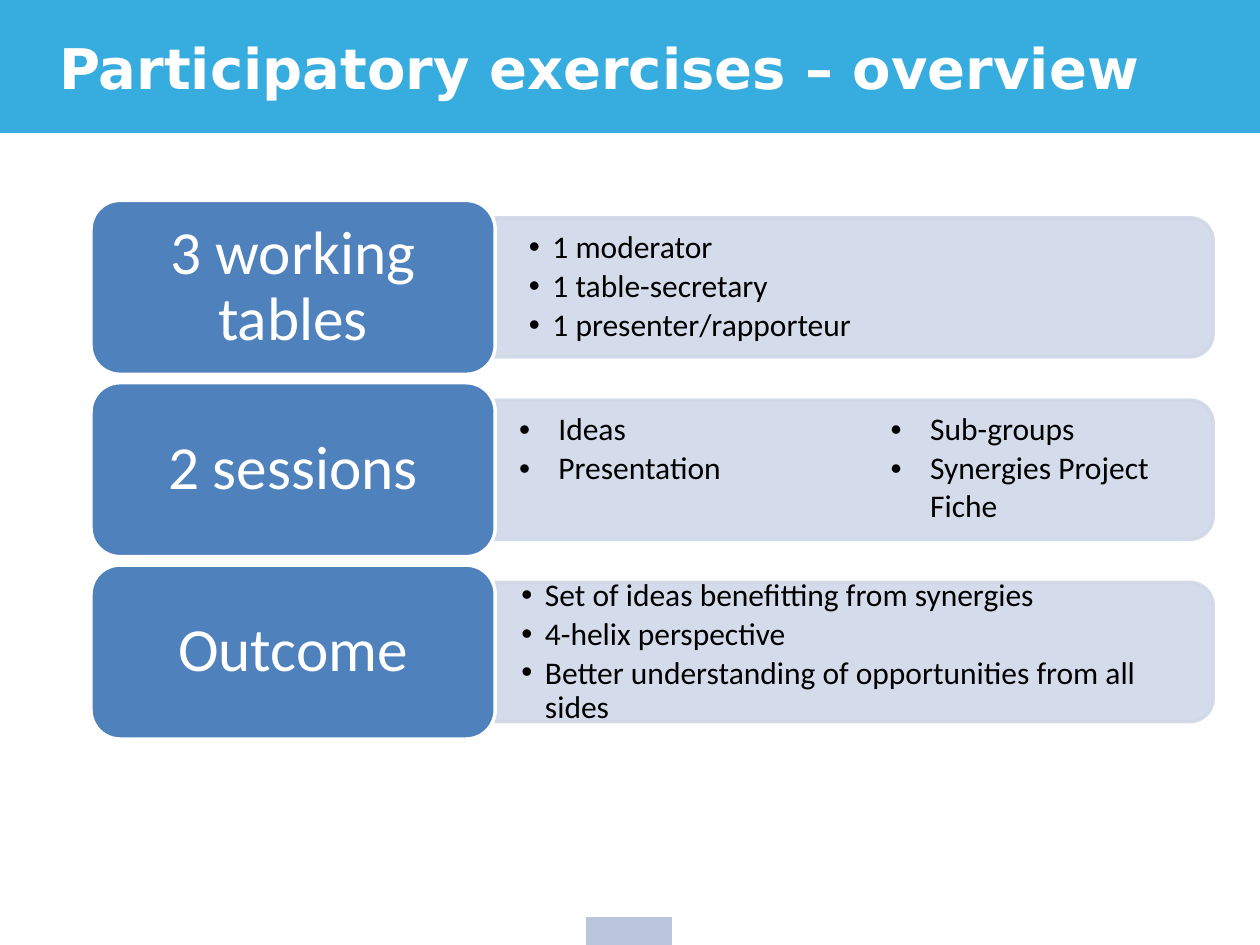
"""Build the overview slide of the participatory exercises."""
from lxml.etree import SubElement
from pptx import Presentation
from pptx.dml.color import RGBColor
from pptx.enum.shapes import MSO_SHAPE
from pptx.enum.text import MSO_ANCHOR, MSO_AUTO_SIZE, PP_ALIGN
from pptx.oxml.ns import qn
from pptx.util import Pt

SKY = RGBColor(0x37, 0xAC, 0xDE)
NAVY = RGBColor(0x17, 0x43, 0x89)
BLUE = RGBColor(0x4F, 0x81, 0xBD)
PALE = RGBColor(0xD0, 0xD8, 0xE8)
WHITE = RGBColor(0xFF, 0xFF, 0xFF)
BLACK = RGBColor(0x00, 0x00, 0x00)

PLAIN_TABLE_STYLE = "{2D5ABB26-0587-4C30-8999-92F81FD0307C}"
FIRST_CENTER, ROW_PITCH = 164.2, 104.2
LABEL_LEFT, LABEL_WIDTH, LABEL_HEIGHT = 52, 231, 99.4
BAND_LEFT, BAND_WIDTH, BAND_HEIGHT = 282.8, 410.4, 79.5
LIST_WIDTH, LIST_HEIGHT = 406.8, 72


def write_text(text_frame, text, size=18, color=BLACK, font="Calibri", bold=False,
               align=PP_ALIGN.LEFT, spacing=1.0, after=0, indent=0):
    """Write one paragraph per line of text, with bullets when indented."""
    for index, line in enumerate(text.split("\n")):
        paragraph = text_frame.paragraphs[0] if index == 0 else text_frame.add_paragraph()
        paragraph.alignment = align
        paragraph.line_spacing = spacing
        paragraph.space_before = Pt(0)
        paragraph.space_after = Pt(after)
        if indent:
            properties = paragraph._p.get_or_add_pPr()
            properties.set("marL", str(Pt(indent)))
            properties.set("indent", str(-Pt(indent)))
            SubElement(properties, qn("a:buFont")).set("typeface", "Arial")
            SubElement(properties, qn("a:buChar")).set("char", "•")
        run = paragraph.add_run()
        run.text = line
        run.font.name = font
        run.font.size = Pt(size)
        run.font.bold = bold
        run.font.color.rgb = color


class SlideBuilder:
    """Hold the style and the current slide."""

    def __init__(self, slide, title_font="DejaVu Sans"):
        self.slide = slide
        self.title_font = title_font

    def place(self, shape, left, top, width, height):
        shape.left, shape.top = Pt(left), Pt(top)
        shape.width, shape.height = Pt(width), Pt(height)
        self.slide.shapes._spTree.append(shape._element)

    def frame(self, shape, horizontal, vertical):
        text_frame = shape.text_frame
        text_frame.word_wrap = True
        text_frame.auto_size = MSO_AUTO_SIZE.NONE
        text_frame.vertical_anchor = MSO_ANCHOR.MIDDLE
        text_frame.margin_left = text_frame.margin_right = Pt(horizontal)
        text_frame.margin_top = text_frame.margin_bottom = Pt(vertical)
        return text_frame

    def box(self, kind, left, top, width, height, fill, line=None, weight=0.75, opacity=100):
        shape = self.slide.shapes.add_shape(kind, Pt(left), Pt(top), Pt(width), Pt(height))
        shape.shadow.inherit = False
        shape.fill.solid()
        shape.fill.fore_color.rgb = fill
        if line is None:
            shape.line.fill.background()
        else:
            shape.line.color.rgb = line
            shape.line.width = Pt(weight)
        if opacity < 100:
            for color in shape._element.spPr.iter(qn("a:srgbClr")):
                SubElement(color, qn("a:alpha")).set("val", str(opacity * 1000))
        return shape

    def title(self, text):
        shape = self.slide.shapes.title
        self.place(shape, 26.6, 15.1, 708.5, 46)
        write_text(self.frame(shape, 7.2, 3.6), text, size=32, color=WHITE,
                   font=self.title_font, bold=True)

    def band(self, center):
        left = BAND_LEFT + (BAND_WIDTH - BAND_HEIGHT) / 2
        shape = self.box(MSO_SHAPE.ROUND_2_SAME_RECTANGLE, left, center - BAND_WIDTH / 2,
                         BAND_HEIGHT, BAND_WIDTH, PALE, PALE, 2, 90)
        shape.rotation = 90

    def label(self, center, text):
        shape = self.box(MSO_SHAPE.ROUNDED_RECTANGLE, LABEL_LEFT, center - LABEL_HEIGHT / 2,
                         LABEL_WIDTH, LABEL_HEIGHT, BLUE, WHITE, 2)
        write_text(self.frame(shape, 15.6, 9.8), text, size=35, color=WHITE,
                   align=PP_ALIGN.CENTER, spacing=0.9)

    def bullets(self, placeholder, center, text, margin):
        self.place(placeholder, BAND_LEFT, center - LIST_HEIGHT / 2, LIST_WIDTH, LIST_HEIGHT)
        write_text(self.frame(placeholder, margin, margin / 2), text,
                   spacing=0.9, after=2.7, indent=13.5)

    def table(self, left, top, height, widths, texts):
        graphic = self.slide.shapes.add_table(1, len(texts), Pt(left), Pt(top),
                                              Pt(sum(widths)), Pt(height))
        table = graphic.table
        table.first_row = table.horz_banding = False
        table._tbl.tblPr.find(qn("a:tableStyleId")).text = PLAIN_TABLE_STYLE
        for index, (width, text) in enumerate(zip(widths, texts)):
            table.columns[index].width = Pt(width)
            cell = table.cell(0, index)
            cell.fill.background()
            write_text(cell.text_frame, text, indent=22.5)


def main():
    presentation = Presentation()
    presentation.slide_width, presentation.slide_height = Pt(720), Pt(540)
    slide = presentation.slides.add_slide(presentation.slide_layouts[3])
    first_list, last_list = slide.placeholders[1], slide.placeholders[2]
    builder = SlideBuilder(slide)

    builder.box(MSO_SHAPE.RECTANGLE, 335.5, 524.2, 48.2, 15.8, NAVY, NAVY)
    builder.box(MSO_SHAPE.RECTANGLE, 0, 0, 720, 75.6, SKY, SKY)
    builder.box(MSO_SHAPE.RECTANGLE, 0, 77, 720, 463, WHITE, opacity=70)
    builder.title("Participatory exercises – overview")

    centers = [FIRST_CENTER + ROW_PITCH * row for row in range(3)]
    for center, text in zip(centers, ("3 working tables", "2 sessions", "Outcome")):
        builder.band(center)
        builder.label(center, text)

    builder.bullets(first_list, centers[0],
                    "1 moderator\n1 table-secretary\n1 presenter/rapporteur", 19.4)
    builder.bullets(last_list, centers[2],
                    "Set of ideas benefitting from synergies\n4-helix perspective\n"
                    "Better understanding of opportunities from all sides", 15.1)
    builder.table(289.4, 231.1, 74.2, (212.4, 184.3),
                  ("Ideas\nPresentation", "Sub-groups\nSynergies Project Fiche"))
    presentation.save("out.pptx")


if __name__ == "__main__":
    main()
